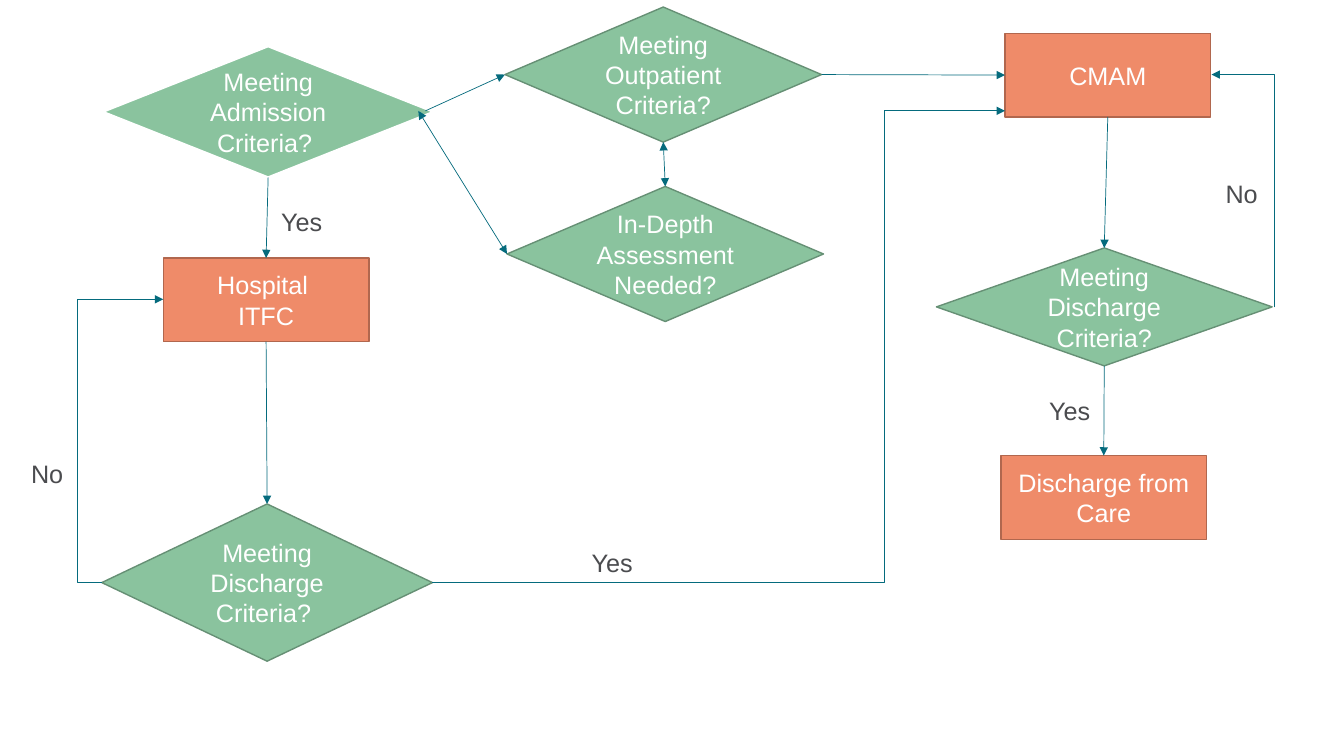
from lxml.etree import SubElement
from pptx import Presentation
from pptx.dml.color import RGBColor
from pptx.enum.shapes import MSO_CONNECTOR, MSO_SHAPE
from pptx.enum.text import MSO_ANCHOR, PP_ALIGN
from pptx.oxml.ns import qn
from pptx.util import Inches, Pt

CELL = Inches(0.1)
GREEN, GREEN_EDGE = "8AC39E", "669075"
ORANGE, ORANGE_EDGE = "EF8B69", "B1674E"
WHITE, GREY, TEAL = "FFFFFF", "4B4C4F", "056B7D"
PROCESS_SIZE = (20.4, 8.3)
LABEL_SIZE = (8.4, 4)
TOP, LEFT, BOTTOM, RIGHT = range(4)


def color(hex_string):
    return RGBColor.from_string(hex_string)


def cells(*counts):
    return [round(count * CELL) for count in counts]


presentation = Presentation()
presentation.slide_width, presentation.slide_height = cells(133.33, 75)
slide = presentation.slides.add_slide(presentation.slide_layouts[6])

decisions = {
    "admission": (10.2, 4.6, 32.8, 13, "Meeting Admission Criteria? ", WHITE, 1.5),
    "hospital discharge": (10.1, 50, 32.8, 15.6, "Meeting Discharge Criteria? ", GREEN_EDGE, 1),
    "outpatient discharge": (92.9, 24.6, 33.3, 11.7, "Meeting Discharge Criteria?", GREEN_EDGE, 1),
    "assessment": (50.3, 18.5, 31.4, 13.4, "In-Depth Assessment Needed?", GREEN_EDGE, 1),
    "outpatient": (50.1, 0.7, 31.4, 13.4, "Meeting Outpatient Criteria?", GREEN_EDGE, 1),
}
processes = {
    "hospital": (16.2, 25.6, "Hospital \nITFC"),
    "cmam": (99.7, 3.3, "CMAM"),
    "discharge": (99.3, 45.2, "Discharge from Care"),
}
steps = [
    (name, MSO_SHAPE.FLOWCHART_DECISION, box, text, GREEN, edge, weight)
    for name, (*box, text, edge, weight) in decisions.items()
] + [
    (name, MSO_SHAPE.FLOWCHART_PROCESS, (left, top, *PROCESS_SIZE), text, ORANGE, ORANGE_EDGE, 1)
    for name, (left, top, text) in processes.items()
]

shapes = {}
written = []
for name, kind, box, text, fill, edge, weight in steps:
    shape = slide.shapes.add_shape(kind, *cells(*box))
    shape.shadow.inherit = False
    shape.fill.solid()
    shape.fill.fore_color.rgb = color(fill)
    shape.line.color.rgb = color(edge)
    shape.line.width = Pt(weight)
    shape.text_frame.vertical_anchor = MSO_ANCHOR.MIDDLE
    shapes[name] = shape
    written.append((shape, text, WHITE, PP_ALIGN.CENTER))

labels = [
    (26.9, 20, "Yes"),
    (57.7, 53.8, "Yes"),
    (2.1, 45, "No"),
    (103.1, 38.7, "Yes"),
    (120.6, 17.2, "No"),
]
for left, top, text in labels:
    label = slide.shapes.add_textbox(*cells(left, top, *LABEL_SIZE))
    written.append((label, text, GREY, PP_ALIGN.LEFT))

for shape, text, text_color, alignment in written:
    shape.text_frame.word_wrap = True
    shape.text_frame.text = text
    for paragraph in shape.text_frame.paragraphs:
        paragraph.alignment = alignment
        paragraph.font.name = "Arial"
        paragraph.font.size = Pt(18)
        paragraph.font.color.rgb = color(text_color)

ONE_WAY, TWO_WAY = ("tailEnd",), ("headEnd", "tailEnd")
arrows = [
    (("admission", BOTTOM), ("hospital", TOP), None, ONE_WAY),
    (("hospital", BOTTOM), ("hospital discharge", TOP), None, ONE_WAY),
    (("cmam", BOTTOM), ("outpatient discharge", TOP), None, ONE_WAY),
    (("outpatient discharge", BOTTOM), ("discharge", TOP), None, ONE_WAY),
    (("outpatient", RIGHT), ("cmam", LEFT), None, ONE_WAY),
    (("outpatient", BOTTOM), ("assessment", TOP), None, TWO_WAY),
    ((42.2, 11), ("outpatient", LEFT), None, ONE_WAY),
    ((41.5, 11), ("assessment", LEFT), None, TWO_WAY),
    ((10.1, 57.8), (16.2, 29.7), -0.4, ONE_WAY),
    ((42.9, 57.8), (99.7, 11), 0.79, ONE_WAY),
    ((126.4, 30.5), (120.2, 7.4), 0, ONE_WAY),
]
for start, end, bend, heads in arrows:
    kind = MSO_CONNECTOR.STRAIGHT if bend is None else MSO_CONNECTOR.ELBOW
    connector = slide.shapes.add_connector(kind, 0, 0, 0, 0)
    if start[0] in shapes:
        connector.begin_connect(shapes[start[0]], start[1])
    else:
        connector.begin_x, connector.begin_y = cells(*start)
    if end[0] in shapes:
        connector.end_connect(shapes[end[0]], end[1])
    else:
        connector.end_x, connector.end_y = cells(*end)
    connector.line.color.rgb = color(TEAL)
    connector.line.width = Pt(0.5)
    properties = connector._element.spPr
    for head in heads:
        SubElement(properties.find(qn("a:ln")), qn(f"a:{head}"), type="triangle")
    SubElement(properties, qn("a:effectLst"))
    if bend is not None:
        guides = properties.find(qn("a:prstGeom")).find(qn("a:avLst"))
        SubElement(guides, qn("a:gd"), name="adj1", fmla=f"val {round(bend * 100000)}")

presentation.save("out.pptx")
